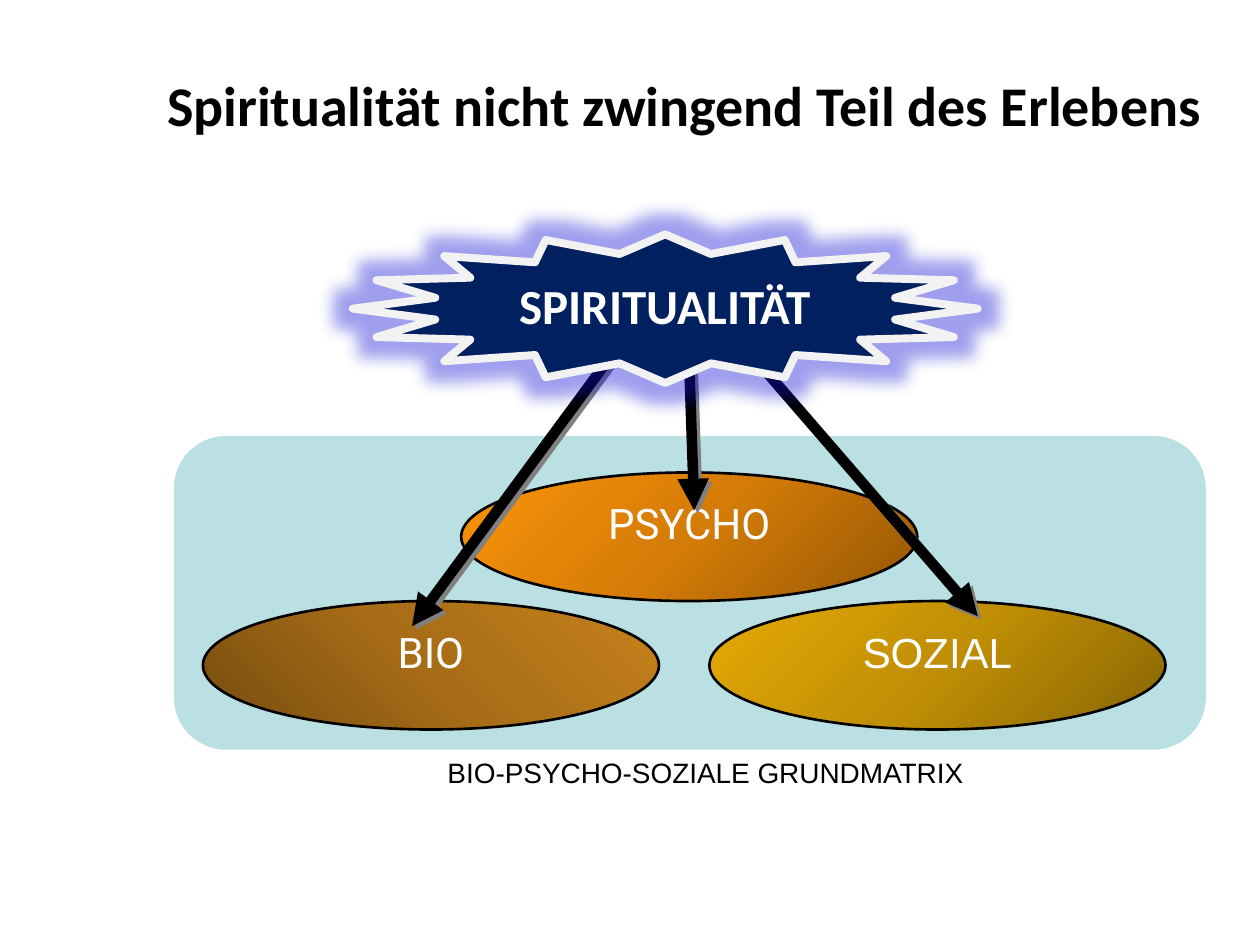
from lxml import etree
from pptx import Presentation
from pptx.dml.color import RGBColor as RGB
from pptx.enum.shapes import MSO_CONNECTOR as Link, MSO_SHAPE as Form
from pptx.enum.text import MSO_ANCHOR as Anchor, PP_ALIGN as Align
from pptx.oxml.ns import qn
from pptx.util import Inches, Pt

COLORS = {
    "black": "000000", "white": "FFFFFF", "base": "BBE0E3",
    "star": "002060", "rim": "F2F2F2", "glow": "1111D5", "shade": "808080",
}
BIO = ("764C10", "A86D17", "C7811B")
SOCIAL = ("876503", "C18F05", "E5AA05")
PSYCHO = ("955705", "D47C07", "FC9308")


def color(name):
    return RGB.from_string(COLORS[name])


def node(parent, tag, **attrs):
    return etree.SubElement(parent, qn(tag), {k: str(v) for k, v in attrs.items()})


def write(shape, text, size, font, tint, bold=False, anchor=Anchor.TOP):
    """Put one centred run into a shape."""
    frame = shape.text_frame
    frame.word_wrap = True
    frame.vertical_anchor = anchor
    par = frame.paragraphs[0]
    par.alignment = Align.CENTER
    run = par.add_run()
    run.text = text
    run.font.size = Pt(size)
    run.font.name = font
    run.font.bold = bold
    run.font.color.rgb = color(tint)


def label(slide, box, *style, **more):
    write(slide.shapes.add_textbox(*map(Inches, box)), *style, **more)


def add_form(slide, form, box, fill=None, line=None, width=0):
    shape = slide.shapes.add_shape(form, *map(Inches, box))
    shape.shadow.inherit = False
    if fill:
        shape.fill.solid()
        shape.fill.fore_color.rgb = color(fill)
    if line:
        shape.line.color.rgb = color(line)
        shape.line.width = Pt(width)
    else:
        shape.line.fill.background()
    return shape


def add_oval(slide, left, top, text, font, stops, angle):
    """Draw an ellipse with a three-colour gradient; angle runs anticlockwise."""
    oval = add_form(slide, Form.OVAL, (left, top, 3.62, 1.02), line="black", width=1.5)
    oval.fill.gradient()
    oval.fill.gradient_angle = angle
    row = oval._element.spPr.find(qn("a:gradFill")).find(qn("a:gsLst"))
    for old in list(row):
        row.remove(old)
    for i, tint in enumerate(stops):
        node(node(row, "a:gs", pos=i * 50000), "a:srgbClr", val=tint)
    write(oval, text, 24, font, "white")


def add_arrow(slide, start, end):
    arrow = slide.shapes.add_connector(Link.STRAIGHT, *map(Inches, start + end))
    arrow.line.color.rgb = color("black")
    arrow.line.width = Pt(6)
    node(arrow.line._get_or_add_ln(), "a:tailEnd", type="triangle")
    effects = node(arrow._element.spPr, "a:effectLst")
    shade = node(effects, "a:outerShdw", dist=Pt(2.8), dir=45 * 60000,
                 algn="ctr", rotWithShape=0)
    node(shade, "a:srgbClr", val=COLORS["shade"])


def add_star(slide):
    star = add_form(slide, Form.STAR_16_POINT, (2.8, 1.86, 4.96, 1.18),
                    "star", "rim", 4.5)
    effects = star._element.spPr.find(qn("a:effectLst"))
    glow = node(effects, "a:glow", rad=Pt(18))
    node(node(glow, "a:srgbClr", val=COLORS["glow"]), "a:alpha", val=40000)
    write(star, "SPIRITUALITÄT", 28, "Calibri", "white", bold=True)


def main():
    deck = Presentation()
    deck.slide_width, deck.slide_height = Inches(10), Inches(7.5)
    slide = deck.slides.add_slide(deck.slide_layouts[6])

    add_form(slide, Form.ROUNDED_RECTANGLE, (1.38, 3.46, 8.19, 2.49), "base")
    label(slide, (1.22, 0.28, 8.43, 1.1),
          "Spiritualität nicht zwingend Teil des Erlebens",
          32, "Calibri", "black", bold=True, anchor=Anchor.MIDDLE)

    add_oval(slide, 1.61, 4.77, "BIO", "Roboto", BIO, 45)
    add_oval(slide, 5.63, 4.77, "SOZIAL", "Arial", SOCIAL, 135)
    add_oval(slide, 3.66, 3.75, "PSYCHO", "Roboto", PSYCHO, 135)

    for start, end in (((6.02, 2.88), (7.76, 4.89)),
                       ((4.92, 2.73), (3.27, 4.97)),
                       ((5.47, 2.88), (5.51, 4.05))):
        add_arrow(slide, start, end)
    add_star(slide)

    label(slide, (2.64, 5.95, 5.92, 0.37), "BIO-PSYCHO-SOZIALE GRUNDMATRIX",
          16, "Arial", "black")
    deck.save("out.pptx")


if __name__ == "__main__":
    main()
